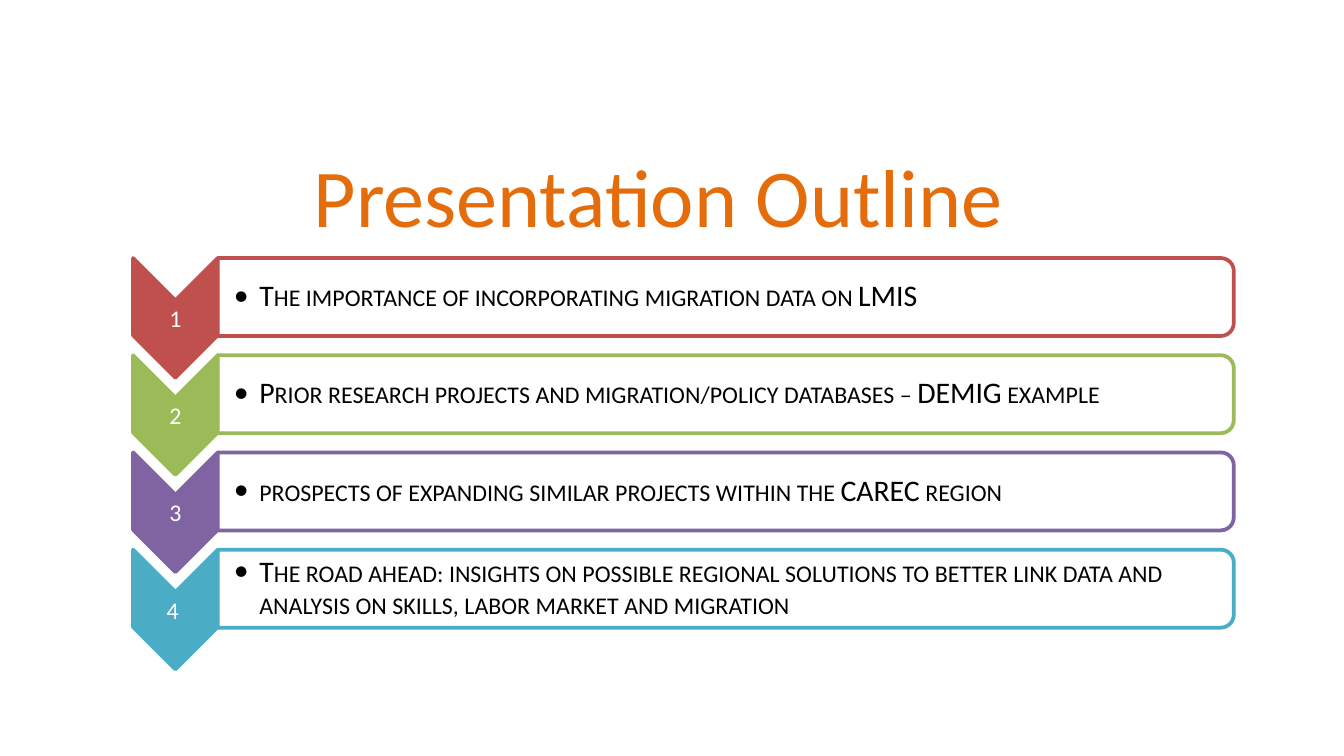
"""Build the Presentation Outline slide: a title over four numbered chevron rows."""
from lxml import etree
from pptx import Presentation
from pptx import util as u
from pptx.dml.color import RGBColor
from pptx.enum import shapes, text
from pptx.oxml.ns import qn

ORANGE = RGBColor(0xE4, 0x6C, 0x0A)
RED = RGBColor(0xC0, 0x50, 0x4D)
GREEN = RGBColor(0x9B, 0xBB, 0x59)
PURPLE = RGBColor(0x80, 0x64, 0xA2)
TEAL = RGBColor(0x4B, 0xAC, 0xC6)
WHITE = RGBColor(0xFF, 0xFF, 0xFF)
BLACK = RGBColor(0, 0, 0)
ROWS = [
    ("1", RED, "The importance of incorporating migration data on LMIS"),
    ("2", GREEN, "Prior research projects and migration/policy databases – DEMIG example"),
    ("3", PURPLE, "prospects of expanding similar projects within the CAREC region"),
    ("4 ", TEAL, "The road ahead: insights on possible regional solutions to better "
                 "link data and analysis on skills, labor market and migration"),
]
LEFT, TOP, STEP = 0.99, 1.92, 2.17 / 3
TAG, BAR, HIGH, DROP = 0.63, 7.56, 0.58, 0.89

deck = Presentation()
deck.slide_width = u.Inches(10)
deck.slide_height = deck.slide_width * 9 // 16
slide = deck.slides.add_slide(deck.slide_layouts[5])


def turned(kind, left, top, wide, high, fill, line):
    """Add a shape turned a quarter so that it covers the given box."""
    x, y = left + (wide - high) / 2, top + (high - wide) / 2
    shape = slide.shapes.add_shape(kind, *map(u.Inches, (x, y, high, wide)))
    shape.rotation = 90
    shape.shadow.inherit = False
    shape.fill.solid()
    shape.fill.fore_color.rgb = fill
    shape.line.color.rgb = line
    shape.line.width = u.Pt(2)
    return shape


def label(words, box, inset, color, align):
    """Add a small-caps text box and return its paragraph."""
    frame = slide.shapes.add_textbox(*map(u.Inches, box)).text_frame
    form = dict(word_wrap=True, vertical_anchor=text.MSO_ANCHOR.MIDDLE,
                margin_left=u.Inches(inset), margin_right=u.Inches(0.01),
                margin_top=u.Inches(0.01), margin_bottom=u.Inches(0.01))
    for key, val in form.items():
        setattr(frame, key, val)
    para = frame.paragraphs[0]
    para.alignment, para.line_spacing = align, 0.9
    run = para.add_run()
    run.text = words
    for key, val in dict(name="Calibri", size=u.Pt(16)).items():
        setattr(run.font, key, val)
    run.font.color.rgb = color
    run._r.get_or_add_rPr().set("cap", "small")
    return para


title = slide.shapes.title
spot = dict(left=0.4, top=0.98, width=9, height=0.94)
for key, val in spot.items():
    setattr(title, key, u.Inches(val))
title.text_frame.text = "Presentation Outline"
title.text_frame.vertical_anchor = text.MSO_ANCHOR.MIDDLE
head = title.text_frame.paragraphs[0]
head.alignment = text.PP_ALIGN.CENTER
font = head.runs[0].font
for key, val in dict(name="Calibri", size=u.Pt(44)).items():
    setattr(font, key, val)
font.color.rgb = ORANGE

for row, (num, hue, words) in enumerate(ROWS):
    top = TOP + row * STEP
    turned(shapes.MSO_SHAPE.CHEVRON, LEFT, top, TAG, DROP, hue, hue)
    label(num, (LEFT, top + 0.31, TAG, 0.27), 0.01, WHITE, text.PP_ALIGN.CENTER)
    bar = turned(shapes.MSO_SHAPE.ROUND_2_SAME_RECTANGLE,
                 LEFT + TAG, top, BAR, HIGH, WHITE, hue)
    tint = bar._element.spPr.find(qn("a:solidFill"))[0]
    etree.SubElement(tint, qn("a:alpha"), val="90000")
    para = label(words, (LEFT + TAG, top + 0.03, BAR - 0.03, 0.52), 0.12, BLACK,
                 text.PP_ALIGN.LEFT)
    props = para._p.get_or_add_pPr()
    props.set("lvl", "1")
    props.set("marL", str(u.Inches(0.19)))
    props.set("indent", str(-u.Inches(0.19)))
    etree.SubElement(props, qn("a:buFont"), typeface="Calibri")
    etree.SubElement(props, qn("a:buChar"), char="•")

deck.save("out.pptx")
